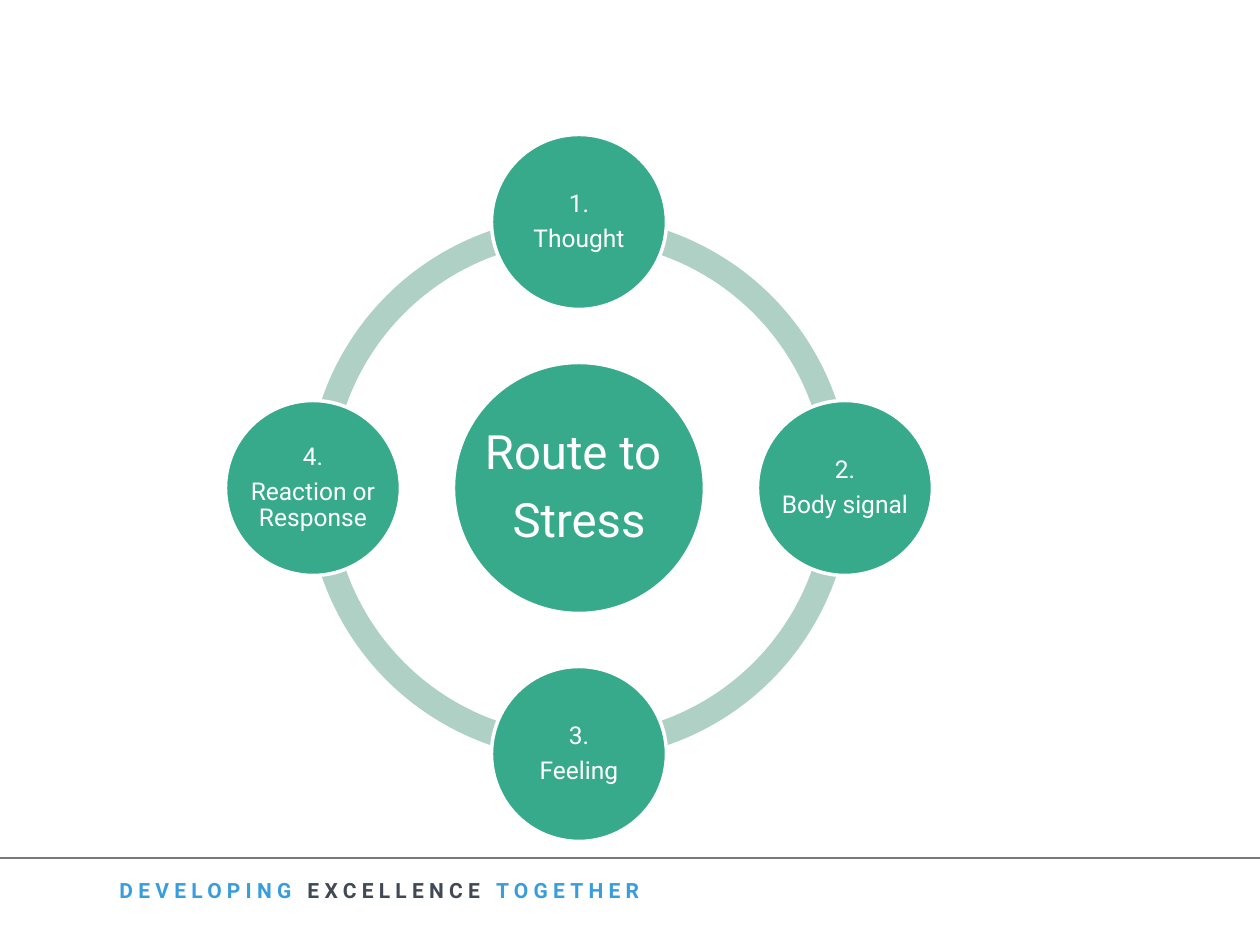
from lxml import etree
from pptx import Presentation
from pptx.dml.color import RGBColor
from pptx.enum.shapes import MSO_CONNECTOR, MSO_SHAPE
from pptx.enum.text import MSO_ANCHOR, PP_ALIGN
from pptx.oxml.ns import qn
from pptx.util import Emu, Pt

PX_PER_INCH = 126
FONT = "Roboto"
GREEN = RGBColor(0x38, 0xAA, 0x8C)
PALE_GREEN = RGBColor(0xAF, 0xD1, 0xC5)
WHITE = RGBColor(0xFF, 0xFF, 0xFF)
GRAY = RGBColor(0x78, 0x79, 0x79)
BLUE = RGBColor(0x39, 0x9D, 0xDC)
SLATE = RGBColor(0x41, 0x49, 0x54)

CENTER_X, CENTER_Y = 579, 488
RING_SIZE, RING_THICKNESS = 544, 0.046
HUB_SIZE, NODE_SIZE, ORBIT = 251, 175, 266

# Direction from the hub (x, y) and the lines of each step
STEPS = [
    (0, -1, ["1.", "Thought"]),
    (1, 0, ["2.", "Body signal"]),
    (0, 1, ["3.", "Feeling"]),
    (-1, 0, ["4.", "Reaction or Response"]),
]
MOTTO = [("DEVELOPING", BLUE), (" EXCELLENCE ", SLATE), ("TOGETHER", BLUE)]


def px(n):
    return Emu(round(n * 914400 / PX_PER_INCH))


def square_at(cx, cy, size):
    """Left, top, width and height of a square centred on a point."""
    return px(cx - size / 2), px(cy - size / 2), px(size), px(size)


def add_footer(s):
    rule = s.shapes.add_connector(
        MSO_CONNECTOR.STRAIGHT, px(0), px(858), px(1260), px(858))
    rule.line.color.rgb = GRAY
    rule.line.width = Pt(0.75)
    etree.SubElement(rule._element.spPr, qn("a:effectLst"))

    tf = s.shapes.add_textbox(px(107), px(871), px(685), px(55)).text_frame
    tf.word_wrap = False
    p = tf.paragraphs[0]
    p.font.name, p.font.size, p.font.bold = FONT, Pt(12), True
    for text, color in MOTTO:
        r = p.add_run()
        r.text = text
        r.font.color.rgb = color
        r._r.get_or_add_rPr().set("spc", "300")


def add_ring(s):
    for start in range(0, 360, 90):
        arc = s.shapes.add_shape(
            MSO_SHAPE.BLOCK_ARC, *square_at(CENTER_X, CENTER_Y, RING_SIZE))
        arc.shadow.inherit = False
        arc.fill.solid()
        arc.fill.fore_color.rgb = PALE_GREEN
        arc.line.fill.background()
        # Angles are stored in 60000ths of a degree, adjustments in 100000ths
        for i, angle in enumerate((start, (start + 90) % 360)):
            arc.adjustments[i] = angle * 0.6
        arc.adjustments[2] = RING_THICKNESS


def add_disc(s, cx, cy, size, lines, font_size, inset):
    """Group a circle with a label that may use its full width."""
    group = s.shapes.add_group_shape()
    box = square_at(cx, cy, size)
    disc = group.shapes.add_shape(MSO_SHAPE.OVAL, *box)
    disc.shadow.inherit = False
    disc.fill.solid()
    disc.fill.fore_color.rgb = GREEN
    disc.line.color.rgb = WHITE
    disc.line.width = Pt(2)

    tf = group.shapes.add_textbox(*box).text_frame
    tf.word_wrap = True
    tf.vertical_anchor = MSO_ANCHOR.MIDDLE
    tf.margin_left = tf.margin_right = px(inset)
    tf.margin_top = tf.margin_bottom = px(inset)
    tf.text = "\n".join(lines)
    for p in tf.paragraphs:
        p.alignment = PP_ALIGN.CENTER
        p.line_spacing = 0.9
        p.space_after = Pt(font_size * 0.35)
        p.font.name, p.font.size = FONT, Pt(font_size)
        p.font.color.rgb = WHITE


def main():
    prs = Presentation()
    prs.slide_width, prs.slide_height = px(1260), px(945)
    s = prs.slides.add_slide(prs.slide_layouts[6])
    add_footer(s)
    add_ring(s)
    add_disc(s, CENTER_X, CENTER_Y, HUB_SIZE, ["Route to ", "Stress"], 27, 5)
    for dx, dy, lines in STEPS:
        add_disc(s, CENTER_X + dx * ORBIT, CENTER_Y + dy * ORBIT,
                 NODE_SIZE, lines, 14, 3)
    prs.save("out.pptx")


if __name__ == "__main__":
    main()
